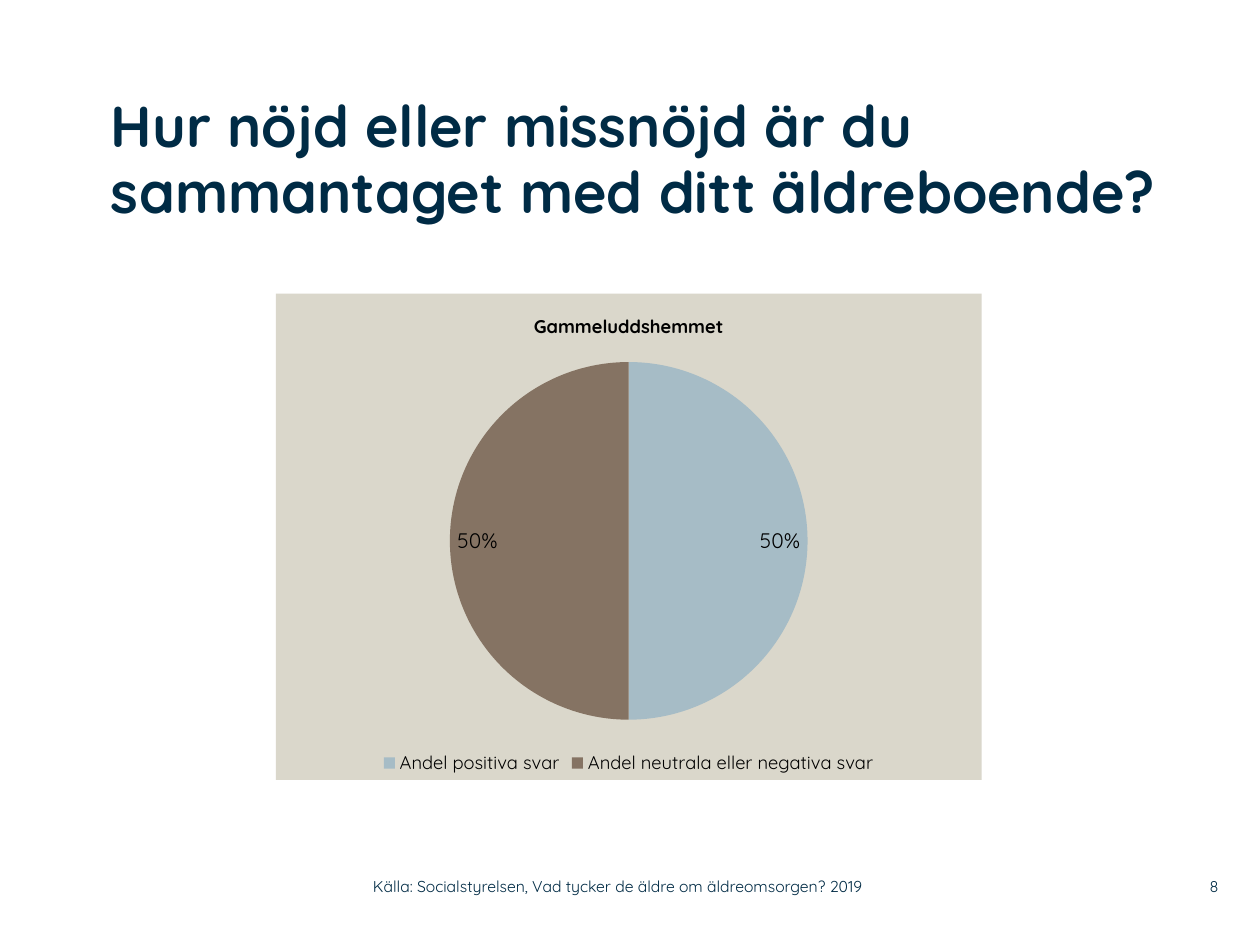
from lxml.etree import SubElement
from pptx import Presentation
from pptx.chart.data import CategoryChartData
from pptx.dml.color import RGBColor
from pptx.enum.chart import XL_CHART_TYPE, XL_LABEL_POSITION, XL_LEGEND_POSITION
from pptx.enum.text import MSO_ANCHOR, PP_ALIGN
from pptx.oxml import parse_xml
from pptx.oxml.ns import nsdecls, qn
from pptx.util import Inches, Pt

FONT = "Quicksand"
NAVY = RGBColor(0x00, 0x2B, 0x45)
BLACK = RGBColor(0x00, 0x00, 0x00)
BLUE = RGBColor(0xA6, 0xBC, 0xC6)
BROWN = RGBColor(0x85, 0x73, 0x63)
SAND = RGBColor(0xDA, 0xD7, 0xCB)


def style(font, size, color, bold=False):
    """Set the face, size, colour and weight of a font."""
    font.name, font.size, font.bold = FONT, Pt(size), bold
    font.color.rgb = color


def add_text(slide, box, text, size, bold=False, align=PP_ALIGN.LEFT, anchor=MSO_ANCHOR.MIDDLE):
    """Add a wrapped text box without margins."""
    frame = slide.shapes.add_textbox(*map(Inches, box)).text_frame
    frame.word_wrap = True
    frame.vertical_anchor = anchor
    frame.margin_left = frame.margin_right = frame.margin_top = frame.margin_bottom = 0
    para = frame.paragraphs[0]
    para.text, para.alignment = text, align
    style(para.font, size, NAVY, bold)
    return para


def fill_chart(chart, color):
    """Give the chart area a plain fill and no border."""
    props = parse_xml(f"<c:spPr {nsdecls('c', 'a')}/>")
    fill = SubElement(props, qn("a:solidFill"))
    SubElement(fill, qn("a:srgbClr"), val=str(color))
    SubElement(SubElement(props, qn("a:ln")), qn("a:noFill"))
    chart.element.find(qn("c:chart")).addnext(props)


def add_pie(slide, box, title, shares):
    """Add a pie chart of (category, value, colour) shares."""
    data = CategoryChartData()
    data.categories = [name for name, _, _ in shares]
    data.add_series("Series 1", [value for _, value, _ in shares])
    chart = slide.shapes.add_chart(XL_CHART_TYPE.PIE, *map(Inches, box), data).chart
    style(chart.font, 18, BLACK)
    fill_chart(chart, SAND)

    chart.has_title = True
    head = chart.chart_title.text_frame
    head.text = title
    style(head.paragraphs[0].font, 10.5, BLACK, True)

    chart.has_legend = True
    chart.legend.position = XL_LEGEND_POSITION.BOTTOM
    chart.legend.include_in_layout = False
    style(chart.legend.font, 10.5, BLACK)

    plot = chart.plots[0]
    plot.vary_by_categories = True
    for index, (_, _, color) in enumerate(shares):
        fill = plot.series[0].points[index].format.fill
        fill.solid()
        fill.fore_color.rgb = color

    labels = plot.series[0].data_labels
    labels.show_percentage, labels.show_value = True, False
    labels.number_format, labels.number_format_is_linked = "0%", False
    labels.position = XL_LABEL_POSITION.INSIDE_END
    style(labels.font, 12, BLACK)


def main():
    """Build and save the slide."""
    deck = Presentation()
    deck.slide_width, deck.slide_height = Inches(10), Inches(7.5)
    slide = deck.slides.add_slide(deck.slide_layouts[6])
    add_text(slide, (9.2, 6.89, 0.47, 0.29), "8", 9, align=PP_ALIGN.RIGHT)
    add_text(slide, (2.96, 6.89, 4.43, 0.29),
             "Källa: Socialstyrelsen, Vad tycker de äldre om äldreomsorgen? 2019", 9)
    title = add_text(slide, (0.88, 0.75, 8.83, 1.42),
                     "Hur nöjd eller missnöjd är du sammantaget med ditt äldreboende?",
                     33, bold=True, anchor=MSO_ANCHOR.TOP)
    title.line_spacing = 0.95
    add_pie(slide, (2.19, 2.33, 5.6, 3.86), "Gammeluddshemmet",
            [("Andel positiva svar", 50, BLUE),
             ("Andel neutrala eller negativa svar", 50, BROWN)])
    deck.save("out.pptx")


if __name__ == "__main__":
    main()
